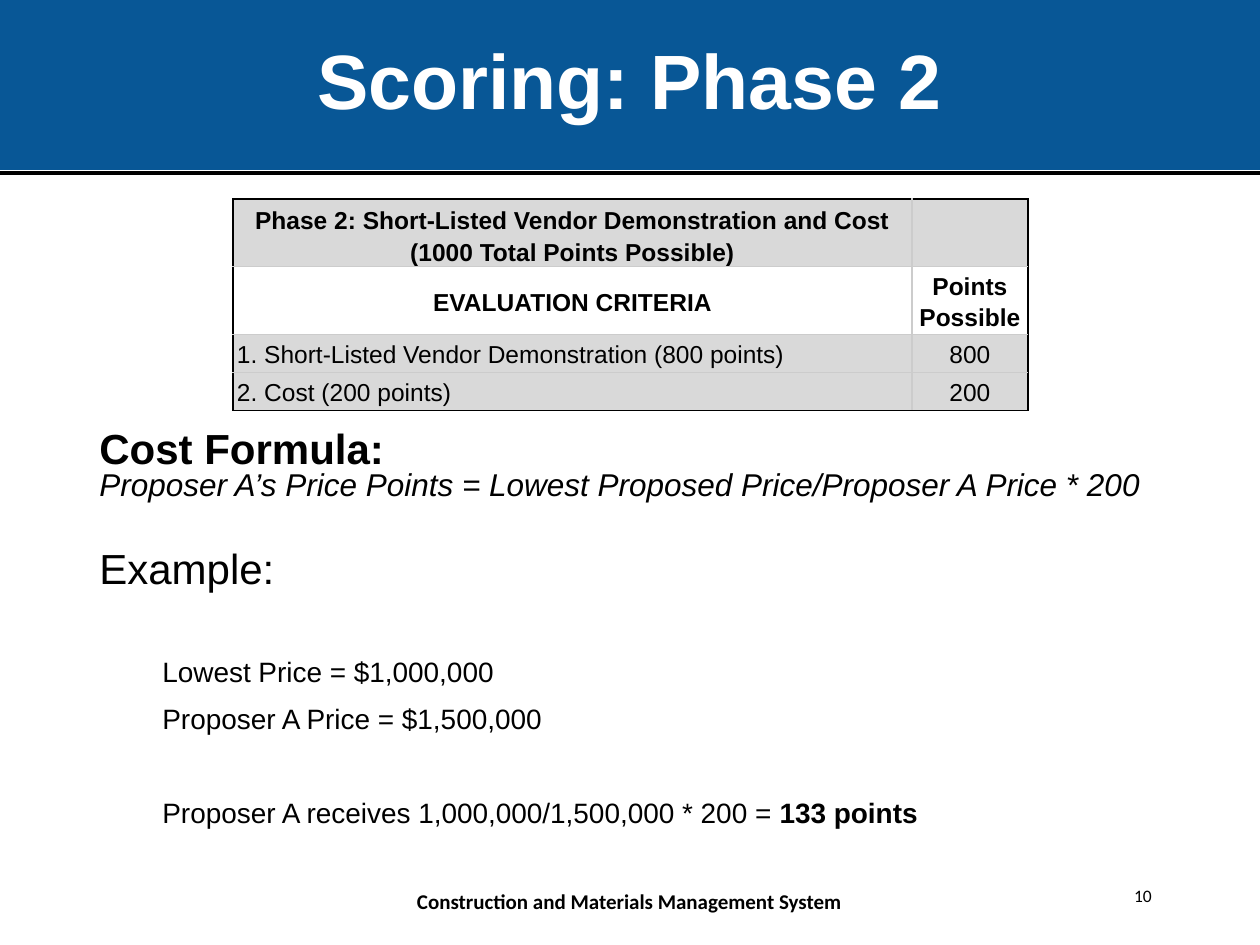
from lxml import etree
from pptx import Presentation, util as u
from pptx.dml.color import RGBColor
from pptx.enum import shapes, text
from pptx.oxml import ns

COLORS = {"banner": "085796", "white": "FFFFFF", "black": "000000",
          "shade": "D9D9D9", "grid": "CCCCCC"}
ALIGN = text.PP_ALIGN
MIDDLE = text.MSO_ANCHOR.MIDDLE
BOTTOM = text.MSO_ANCHOR.BOTTOM


def px(length):
    return u.Emu(round(length * 914400 / 126))


def color(name):
    return RGBColor.from_string(COLORS[name])


def write(paragraph, words, size=14, font="Arial", ink="black", bold=False,
          italic=False, align=ALIGN.LEFT, spacing=1.0, before=0):
    run = paragraph.add_run()
    run.text = words
    run.font.size, run.font.name = u.Pt(size), font
    run.font.bold, run.font.italic = bold, italic
    run.font.color.rgb = color(ink)
    paragraph.alignment = align
    paragraph.line_spacing = spacing
    if before:
        paragraph.space_before = u.Pt(before)


def add_frame(slide, box, anchor):
    frame = slide.shapes.add_textbox(*map(px, box)).text_frame
    frame.word_wrap = True
    frame.vertical_anchor = anchor
    return frame


def add_banner(slide, box):
    left, top, width, height = box
    banner = slide.shapes.add_shape(shapes.MSO_SHAPE.RECTANGLE, *map(px, box))
    banner.shadow.inherit = False
    banner.fill.solid()
    banner.fill.fore_color.rgb = color("banner")
    banner.line.fill.background()
    banner.text_frame.word_wrap = True
    banner.text_frame.vertical_anchor = MIDDLE
    write(banner.text_frame.paragraphs[0], "Scoring: Phase 2", size=44,
          ink="white", bold=True, align=ALIGN.CENTER, spacing=0.9)

    # Rule just below the banner
    rule_y = px(top + height + 3)
    rule = slide.shapes.add_connector(shapes.MSO_CONNECTOR.STRAIGHT,
                                      px(left + width), rule_y, px(left), rule_y)
    rule.line.color.rgb = color("black")
    rule.line.width = u.Pt(2)
    etree.SubElement(rule._element.spPr, ns.qn("a:effectLst"))


def set_borders(cell, outer_sides):
    for side in "LRTB":
        line = etree.SubElement(cell._tc.get_or_add_tcPr(), ns.qn(f"a:ln{side}"),
                                w=str(u.Pt(0.75)))
        fill = etree.SubElement(line, ns.qn("a:solidFill"))
        etree.SubElement(fill, ns.qn("a:srgbClr"),
                         val=COLORS["black" if side in outer_sides else "grid"])


def add_criteria(slide, box):
    heading = ["Phase 2: Short-Listed Vendor Demonstration and Cost",
               "(1000 Total Points Possible)"]
    rows = [(heading, []),
            (["EVALUATION CRITERIA"], ["Points Possible"]),
            (["1. Short-Listed Vendor Demonstration (800 points)"], ["800"]),
            (["2. Cost (200 points)"], ["200"])]
    criteria = slide.shapes.add_table(len(rows), 2, *map(px, box)).table
    criteria.first_row = criteria.horz_banding = False
    points_width = 116
    criteria.columns[0].width = px(box[2] - points_width)
    criteria.columns[1].width = px(points_width)
    for row, height in zip(criteria.rows, (49, 49, 38, 38)):
        row.height = px(height)

    for r, row in enumerate(rows):
        for c, lines in enumerate(row):
            cell = criteria.cell(r, c)
            cell.margin_left = cell.margin_right = px(4)
            cell.margin_top = cell.margin_bottom = 0
            cell.vertical_anchor = BOTTOM if r == 0 else MIDDLE
            outer = "LR"[c] + ("T" if r == 0 else "B" if r == len(rows) - 1 else "")
            set_borders(cell, outer)
            if r == 1:
                cell.fill.background()
            else:
                cell.fill.solid()
                cell.fill.fore_color.rgb = color("shade")
            for n, line in enumerate(lines):
                frame = cell.text_frame
                paragraph = frame.add_paragraph() if n else frame.paragraphs[0]
                write(paragraph, line, bold=r < 2, spacing=1.15,
                      align=ALIGN.LEFT if r > 1 and c == 0 else ALIGN.CENTER)


def add_formula(slide, box):
    frame = add_frame(slide, box, text.MSO_ANCHOR.TOP)
    write(frame.paragraphs[0], "Cost Formula:", size=24, bold=True, spacing=0.8)
    write(frame.add_paragraph(),
          "Proposer A’s Price Points = Lowest Proposed Price/Proposer A Price * 200",
          size=18, italic=True, spacing=0.8)
    write(frame.add_paragraph(), "Example:", size=24, spacing=0.8, before=28)

    # Worked example, indented
    steps = [("Lowest Price = $1,000,000", 28),
             ("Proposer A Price = $1,500,000", 0),
             ("Proposer A receives 1,000,000/1,500,000 * 200 = ", 27)]
    for words, before in steps:
        step = frame.add_paragraph()
        step._p.get_or_add_pPr().set("marL", str(px(63)))
        write(step, words, size=16, spacing=1.4, before=before)
    write(step, "133 points", size=16, bold=True, spacing=1.4)


def add_footer(slide, system_box, number_box):
    system = add_frame(slide, system_box, MIDDLE)
    write(system.paragraphs[0], "Construction and Materials Management System",
          size=12, font="Calibri", bold=True, align=ALIGN.CENTER)
    number = add_frame(slide, number_box, MIDDLE)
    write(number.paragraphs[0], "10", size=10, font="Calibri", align=ALIGN.RIGHT)


def main():
    deck = Presentation()
    deck.slide_width, deck.slide_height = px(1260), px(945)
    slide = deck.slides.add_slide(deck.slide_layouts[6])
    add_banner(slide, (0, 0, 1260, 170))
    add_footer(slide, (396, 876, 467, 50), (881, 871, 283, 50))
    add_criteria(slide, (233, 199, 795, 174))
    add_formula(slide, (87, 426, 1086, 425))
    deck.save("out.pptx")


if __name__ == "__main__":
    main()
